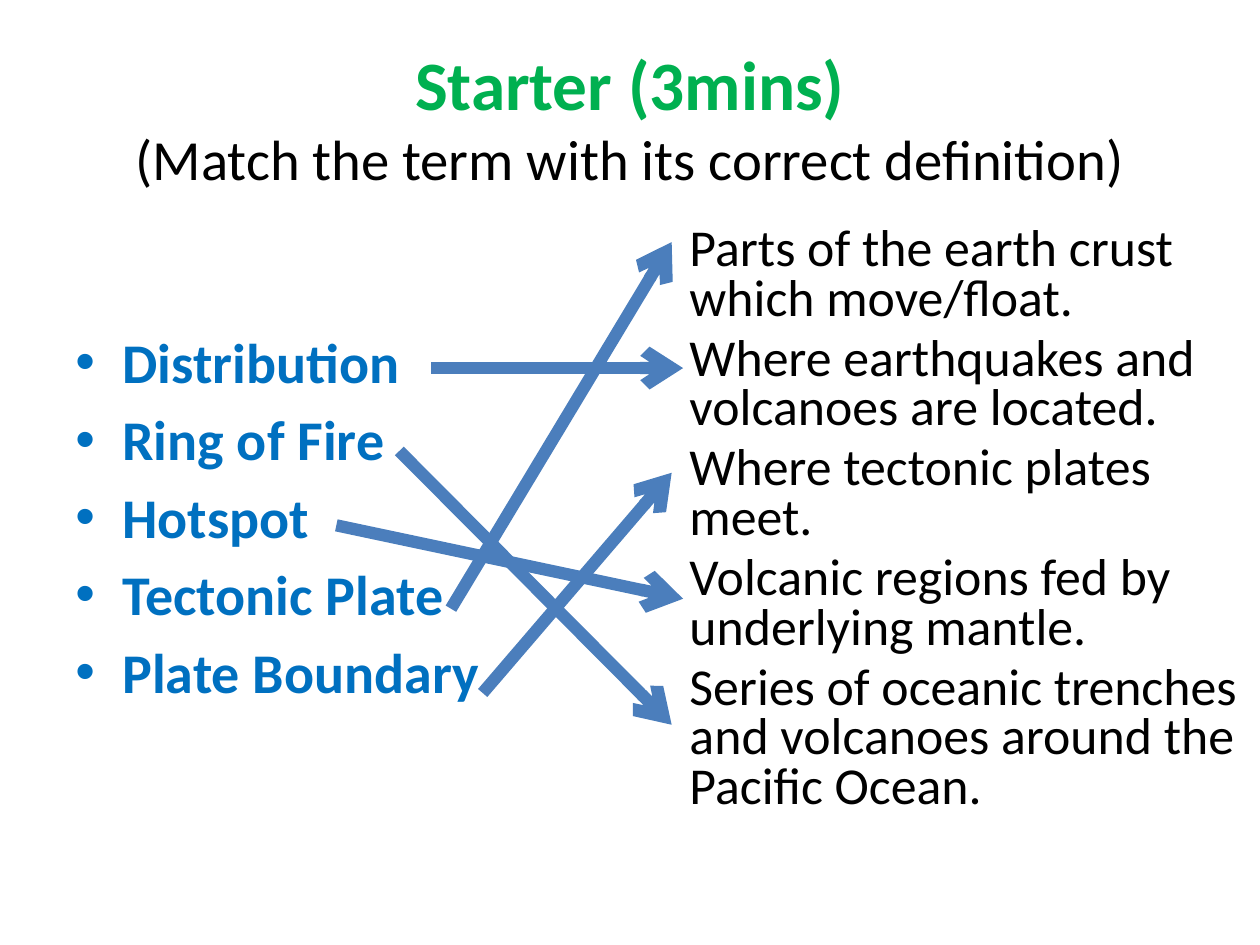
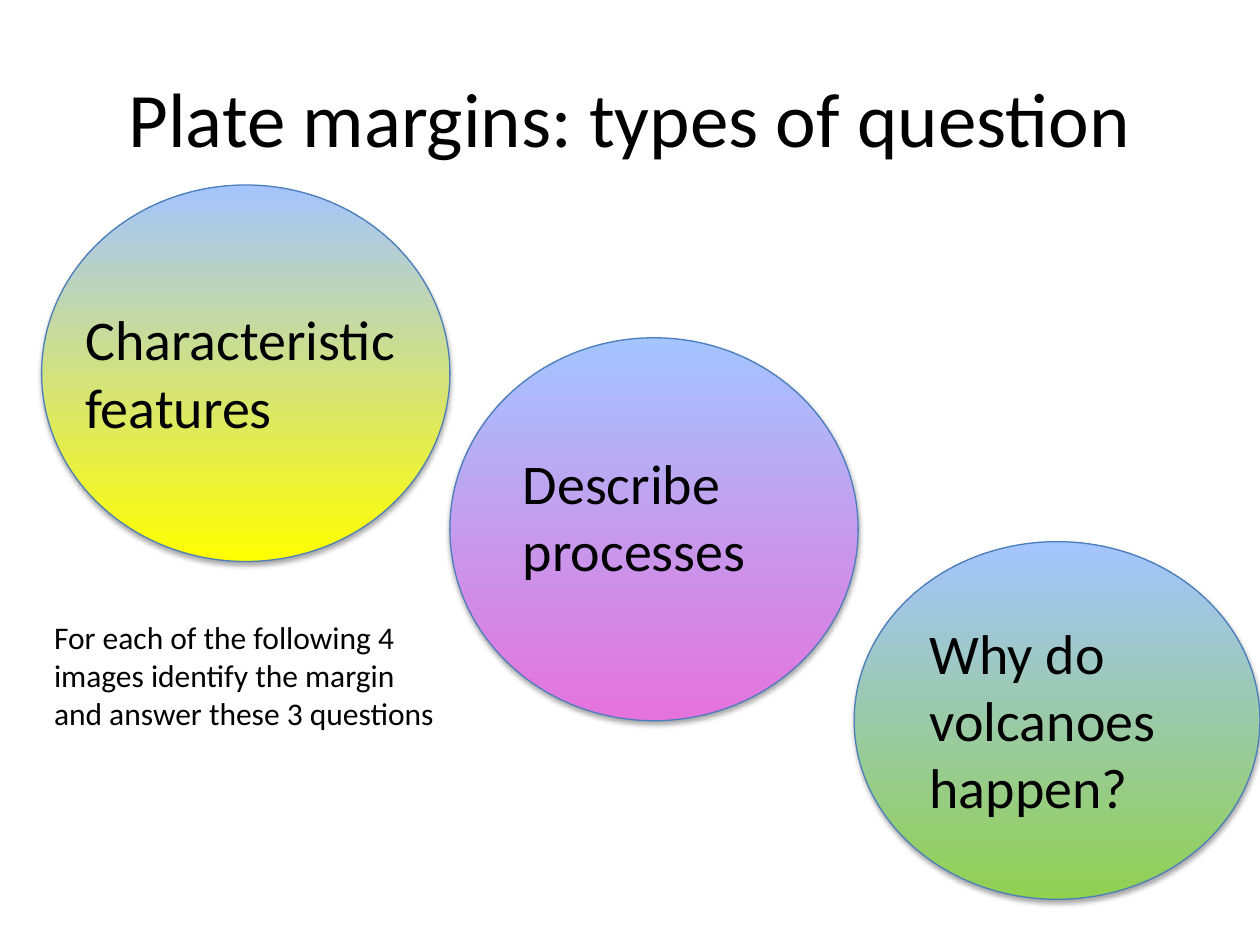
from dataclasses import dataclass
from typing import Any, NamedTuple

import lxml.etree
import pptx
import pptx.dml.color
import pptx.enum.shapes
import pptx.enum.text
import pptx.oxml
import pptx.oxml.ns
import pptx.util

Cm, Pt = pptx.util.Cm, pptx.util.Pt
qn = pptx.oxml.ns.qn
ALIGN = pptx.enum.text.PP_ALIGN
ANCHOR = pptx.enum.text.MSO_ANCHOR


# Shared look
@dataclass(frozen=True)
class Theme:
    font: str = "Calibri"
    ink: str = "000000"
    green: str = "00B050"
    term: str = "0070C0"
    line: str = "4B7EBC"
    sky: str = "A4C4FF"
    title: float = 44
    head: float = 39.6
    task: float = 32.4
    body: float = 32
    match: float = 29.6
    note: float = 18
    gap: float = 5.8
    arrow: float = 7
    edge: float = 0.75


THEME = Theme()


class Box(NamedTuple):
    """Left, top, width and height in centimetres."""
    left: float
    top: float
    width: float
    height: float

    def cm(self) -> list[int]:
        return [Cm(side) for side in self]


class Arrow(NamedTuple):
    x1: float
    y1: float
    x2: float
    y2: float


class Bubble(NamedTuple):
    box: Box
    base: str
    label: Box
    text: str


TITLE = Box(1.27, 0.76, 22.86, 3.18)
INDENT = Cm(0.95)

# Content of the matching task
TERMS = ["Distribution", "Ring of Fire", "Hotspot", "Tectonic Plate", "Plate Boundary"]
MEANINGS = [
    "Parts of the earth crust which move/float.",
    "Where earthquakes and volcanoes are located.",
    "Where tectonic plates meet.",
    "Volcanic regions fed by underlying mantle.",
    "Series of oceanic trenches and volcanoes around the Pacific Ocean.",
]
ARROWS = [
    Arrow(8.69, 7.42, 13.77, 7.42),
    Arrow(8.05, 9.09, 13.54, 14.61),
    Arrow(9.09, 12.27, 13.54, 4.88),
    Arrow(6.78, 10.59, 13.77, 12.07),
    Arrow(9.73, 13.97, 13.54, 9.53),
]

# Content of the question types
BUBBLES = [
    Bubble(Box(0.84, 3.73, 8.23, 7.59), "FFFF00",
           Box(1.47, 6.02, 6.96, 3), "Characteristic features"),
    Bubble(Box(9.07, 6.81, 8.23, 7.72), "E573DC",
           Box(10.29, 8.92, 6.96, 3), "Describe processes"),
    Bubble(Box(17.22, 10.92, 8.18, 7.21), "92D050",
           Box(18.49, 12.34, 6.96, 4.37), "Why do volcanoes happen?"),
]
NOTE = "For each of the following 4 images identify the margin and answer these 3 questions"


# Drawing helpers
def rgb(code: str) -> pptx.dml.color.RGBColor:
    return pptx.dml.color.RGBColor.from_string(code)


def style(run: Any, size: float, color: str = THEME.ink, bold: bool = False) -> None:
    run.font.name = THEME.font
    run.font.size = Pt(size)
    run.font.bold = bold
    run.font.color.rgb = rgb(color)


def add_text(slide: Any, box: Box, text: str, size: float,
             color: str = THEME.ink, bold: bool = False) -> Any:
    frame = slide.shapes.add_textbox(*box.cm()).text_frame
    frame.word_wrap = True
    frame.text = text
    for para in frame.paragraphs:
        for run in para.runs:
            style(run, size, color, bold)
    return frame


def add_title(slide: Any, text: str, size: float) -> Any:
    frame = add_text(slide, TITLE, text, size)
    frame.vertical_anchor = ANCHOR.MIDDLE
    frame.paragraphs[0].alignment = ALIGN.CENTER
    return frame


def set_list(frame: Any, bullet: bool = False, pitch: float = 1.0) -> None:
    for para in frame.paragraphs:
        para.space_before = Pt(THEME.gap)
        para.line_spacing = pitch
        props = para._p.get_or_add_pPr()
        props.set("marL", str(INDENT))
        props.set("indent", str(-INDENT if bullet else 0))
        if bullet:
            lxml.etree.SubElement(props, qn("a:buFont"), typeface="Arial")
            lxml.etree.SubElement(props, qn("a:buChar"), char="•")


def add_arrow(slide: Any, arrow: Arrow) -> None:
    kind = pptx.enum.shapes.MSO_CONNECTOR.STRAIGHT
    link = slide.shapes.add_connector(kind, *[Cm(spot) for spot in arrow])
    link.line.color.rgb = rgb(THEME.line)
    link.line.width = Pt(THEME.arrow)
    lxml.etree.SubElement(link.line._get_or_add_ln(), qn("a:tailEnd"), type="arrow")
    lxml.etree.SubElement(link._element.spPr, qn("a:effectLst"))


def add_shadow(shape: Any) -> None:
    shape.shadow.inherit = False
    effects = shape._element.spPr.find(qn("a:effectLst"))
    outer = lxml.etree.SubElement(
        effects, qn("a:outerShdw"), blurRad=str(Pt(3.1)), dist=str(Pt(1.8)),
        dir="5400000", rotWithShape="0")
    color = lxml.etree.SubElement(outer, qn("a:srgbClr"), val=THEME.ink)
    lxml.etree.SubElement(color, qn("a:alpha"), val="35000")


def add_bubble(slide: Any, bubble: Bubble) -> None:
    kind = pptx.enum.shapes.MSO_SHAPE.OVAL
    oval = slide.shapes.add_shape(kind, *bubble.box.cm())
    oval.fill.gradient()
    oval.fill.gradient_angle = 90
    for stop, color, place in zip(oval.fill.gradient_stops, (bubble.base, THEME.sky), (0, 1)):
        stop.color.rgb = rgb(color)
        stop.position = place
    oval.line.color.rgb = rgb(THEME.line)
    oval.line.width = Pt(THEME.edge)
    add_shadow(oval)


# Slides
def build_match(slide: Any) -> None:
    title = add_title(
        slide, "Starter (3mins)\v(Match the term with its correct definition)", THEME.task)
    style(title.paragraphs[0].runs[0], THEME.head, THEME.green, bold=True)
    terms = add_text(slide, Box(1.27, 6.48, 10.59, 12.57), "\n".join(TERMS),
                     THEME.body, THEME.term, bold=True)
    set_list(terms, bullet=True)
    meanings = add_text(slide, Box(12.7, 4.45, 12.7, 13.54), "\n".join(MEANINGS), THEME.match)
    set_list(meanings, pitch=0.8)
    for arrow in ARROWS:
        add_arrow(slide, arrow)


def build_types(slide: Any) -> None:
    add_title(slide, "Plate margins: types of question", THEME.title)
    for bubble in BUBBLES:
        add_bubble(slide, bubble)
    for bubble in BUBBLES:
        add_text(slide, bubble.label, bubble.text, THEME.body)
    add_text(slide, Box(0.84, 12.34, 8.23, 2.57), NOTE, THEME.note)


def main() -> None:
    deck = pptx.Presentation()
    deck.slide_width, deck.slide_height = Cm(25.4), Cm(19.05)
    for build in (build_match, build_types):
        build(deck.slides.add_slide(deck.slide_layouts[6]))
    deck.save("out.pptx")


if __name__ == "__main__":
    main()
